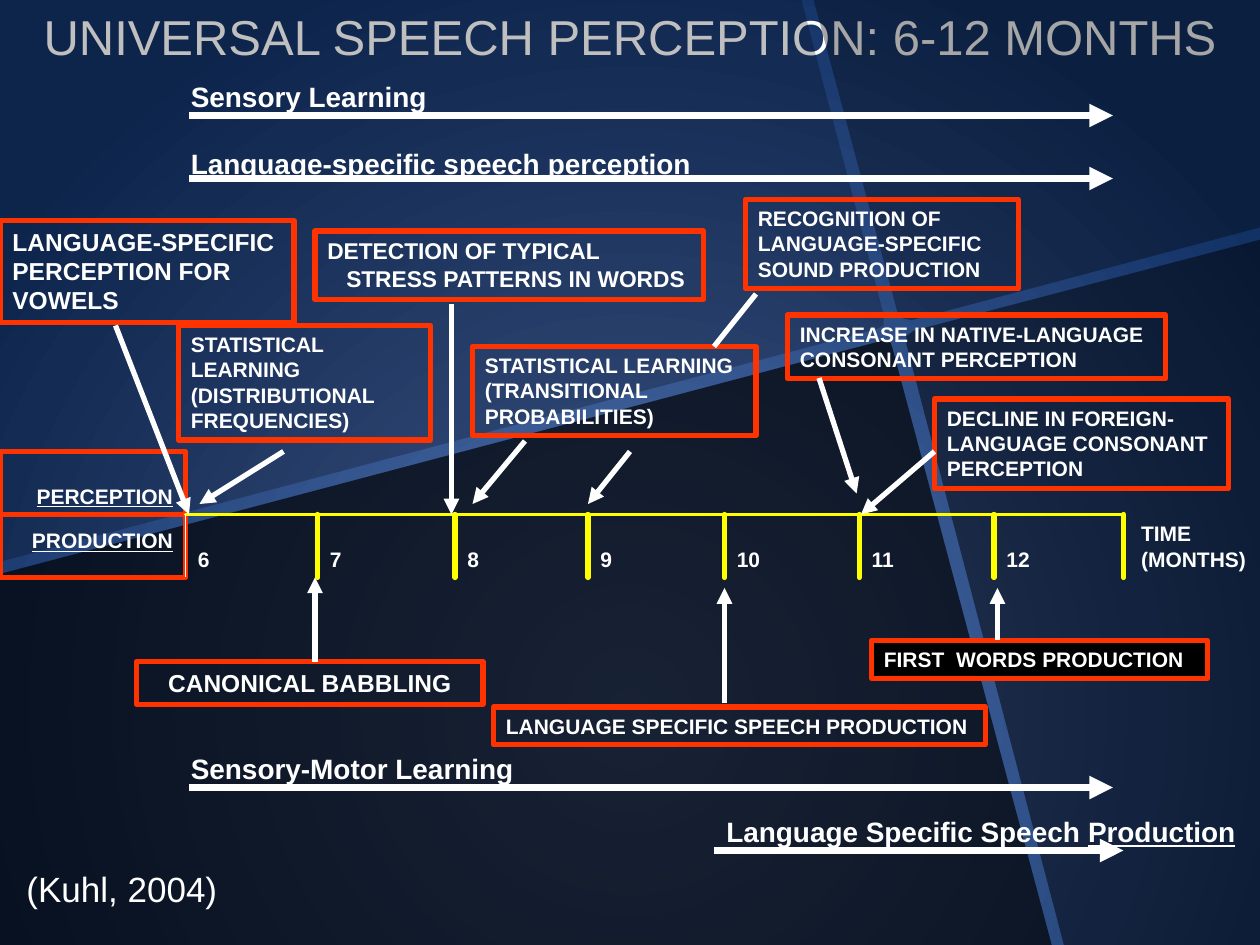
from dataclasses import dataclass

import pptx
import pptx.dml.color
import pptx.enum.shapes
import pptx.enum.text
import pptx.oxml
import pptx.oxml.ns
import pptx.util
from lxml import etree

Pt = pptx.util.Pt
Align = pptx.enum.text.PP_ALIGN
Anchor = pptx.enum.text.MSO_ANCHOR
qn = pptx.oxml.ns.qn


@dataclass(frozen=True)
class Theme:
    font: str = "Arial"
    white: str = "FFFFFF"
    black: str = "000000"
    red: str = "FF3300"
    yellow: str = "FFFF00"
    glow: str = "5273B1"
    navy: str = "123165"
    title: int = 28
    cite: int = 20
    head: int = 16
    large: int = 14
    mid: int = 13
    small: int = 12


@dataclass(frozen=True)
class Panel:
    points: tuple
    shade: int


@dataclass(frozen=True)
class Box:
    text: str
    left: float
    top: float
    width: float
    height: float
    size: int = 12
    align: Align = Align.LEFT
    fill: str = ""
    hang: float = 0


@dataclass(frozen=True)
class Line:
    x1: float
    y1: float
    x2: float
    y2: float
    color: str = "FFFFFF"
    weight: float = 3
    arrow: bool = True
    cap: str = "flat"


@dataclass(frozen=True)
class Label:
    text: str
    left: float
    top: float
    width: float
    tail: str = ""


theme = Theme()

PANELS = (
    Panel(((0, 0), (458, 0), (505.4, 180), (505, 185.5), (501, 188), (0, 321)), 25),
    Panel(((465, 0), (720, 0), (720, 130.3), (520.6, 182.9), (516, 182.5), (512.6, 178.6)), 35),
    Panel(((720, 136.8), (720, 540), (608.4, 540), (517.7, 197.3), (518, 192), (522, 189.4)), 50),
    Panel(((505.4, 194.4), (509, 196), (510.5, 199.4), (601.2, 540), (0, 540), (0, 328.3), (502.6, 195.1)), 70),
)
LABELS = (
    Label("Sensory Learning", 102, 42, 180),
    Label("Language-specific speech ", 102, 80, 304, "perception"),
    Label("Sensory-Motor Learning", 102, 426, 252),
    Label("Language Specific Speech ", 408, 462, 312, "Production"),
)
BOXES = (
    Box("CANONICAL BABBLING", 78, 378, 198, 24.5, theme.large, Align.CENTER),
    Box("STATISTICAL LEARNING (DISTRIBUTIONAL FREQUENCIES)", 102, 186, 144, 65.5),
    Box("LANGUAGE-SPECIFIC PERCEPTION FOR VOWELS", 0, 126, 168, 58.5, theme.large),
    Box("LANGUAGE SPECIFIC SPEECH PRODUCTION", 282, 404, 281, 21.6),
    Box("FIRST  WORDS PRODUCTION", 498, 366, 192, 21.6, fill=theme.black),
    Box("DETECTION OF TYPICAL\vSTRESS PATTERNS IN WORDS", 180, 132, 222, 39, theme.mid, hang=10.8),
    Box("DECLINE IN FOREIGN-LANGUAGE CONSONANT PERCEPTION", 534, 228, 168, 51),
    Box("INCREASE IN NATIVE-LANGUAGE CONSONANT PERCEPTION", 450, 180, 216, 36.5),
    Box("STATISTICAL LEARNING (TRANSITIONAL PROBABILITIES)", 270, 198, 162, 51),
    Box("RECOGNITION OF LANGUAGE-SPECIFIC SOUND PRODUCTION", 426, 114, 156, 51),
)
SPANS = ((108, 636, 66), (108, 636, 102), (108, 636, 450), (408, 642, 486))
LINKS = (
    Line(180, 378, 180, 330),
    Line(162, 258, 114, 288),
    Line(66, 186, 108, 294),
    Line(414, 402, 414, 336),
    Line(570, 366, 570, 336),
    Line(258, 174, 258, 294),
    Line(534, 258, 492, 294),
    Line(468, 216, 489.5, 282),
    Line(300, 252, 270, 288),
    Line(360, 258, 336, 288),
    Line(408, 198, 432, 168, arrow=False),
)
TICKS = (106, 181.5, 260, 336, 414, 491, 568, 642)
AXIS, FOOT, HALF = 294, 330, 36


def rgb(code: str) -> pptx.dml.color.RGBColor:
    return pptx.dml.color.RGBColor.from_string(code)


def write(shape, text: str, *, size: int, bold: bool = True, under: bool = False,
          tail: str = "", align: Align = Align.LEFT, anchor: Anchor = Anchor.TOP,
          base: float = 3.6, hang: float = 0, wrap: bool = True) -> None:
    frame = shape.text_frame
    frame.word_wrap = wrap
    frame.auto_size = pptx.enum.text.MSO_AUTO_SIZE.NONE
    frame.vertical_anchor = anchor
    frame.margin_left = frame.margin_right = Pt(7.2)
    frame.margin_top, frame.margin_bottom = Pt(3.6), Pt(base)
    para = frame.paragraphs[0]
    para.text = text
    para.alignment = align
    if hang:
        props = para._p.get_or_add_pPr()
        props.set("marL", str(Pt(hang)))
        props.set("indent", str(-Pt(hang)))
    if tail:
        para.add_run().text = tail
    for run in para.runs:
        font = run.font
        font.name, font.size, font.bold = theme.font, Pt(size), bold
        font.underline = under or bool(tail and run.text == tail)
        font.color.rgb = rgb(theme.white)


def field(slide, left: float, top: float, width: float, height: float):
    return slide.shapes.add_textbox(Pt(left), Pt(top), Pt(width), Pt(height))


def frame(slide, left: float, top: float, width: float, height: float, fill: str = ""):
    kind = pptx.enum.shapes.MSO_SHAPE.RECTANGLE
    shape = slide.shapes.add_shape(kind, Pt(left), Pt(top), Pt(width), Pt(height))
    shape.shadow.inherit = False
    if fill:
        shape.fill.solid()
        shape.fill.fore_color.rgb = rgb(fill)
    else:
        shape.fill.background()
    shape.line.color.rgb = rgb(theme.red)
    shape.line.width = Pt(3)
    return shape


def draw_box(slide, box: Box) -> None:
    shape = frame(slide, box.left, box.top, box.width, box.height, box.fill)
    write(shape, box.text, size=box.size, align=box.align, hang=box.hang)


def draw_line(slide, line: Line) -> None:
    kind = pptx.enum.shapes.MSO_CONNECTOR.STRAIGHT
    link = slide.shapes.add_connector(kind, Pt(line.x1), Pt(line.y1), Pt(line.x2), Pt(line.y2))
    link.line.color.rgb = rgb(line.color)
    link.line.width = Pt(line.weight)
    props = link._element.spPr
    stroke = props.find(qn("a:ln"))
    stroke.set("cap", line.cap)
    if line.arrow:
        etree.SubElement(stroke, qn("a:tailEnd")).set("type", "triangle")
    etree.SubElement(props, qn("a:effectLst"))


def draw_panel(slide, panel: Panel) -> None:
    first, *rest = panel.points
    pen = slide.shapes.build_freeform(*first, scale=Pt(1))
    pen.add_line_segments(rest, close=True)
    shape = pen.convert_to_shape()
    shape.shadow.inherit = False
    shape.line.fill.background()
    shape.fill.solid()
    shape.fill.fore_color.rgb = rgb(theme.black)
    tint = next(shape._element.spPr.iter(qn("a:srgbClr")))
    etree.SubElement(tint, qn("a:alpha")).set("val", str(panel.shade * 1000))


def paint(slide) -> None:
    fill = slide.background.fill
    fill.gradient()
    for stop, code in zip(fill.gradient_stops, (theme.glow, theme.navy)):
        stop.color.rgb = rgb(code)
    grad = next(slide.element.iter(qn("a:gradFill")))
    grad.remove(grad.find(qn("a:lin")))
    shade = etree.SubElement(grad, qn("a:path"))
    shade.set("path", "circle")
    rect = etree.SubElement(shade, qn("a:fillToRect"))
    for side in "ltr":
        rect.set(side, "50000")


def draw_axis(slide) -> None:
    for text, top, base in (("PRODUCTION", AXIS, 14), ("PERCEPTION", AXIS - HALF, 3.6)):
        write(frame(slide, 0, top, TICKS[0], HALF), text, size=theme.small, under=True,
              align=Align.RIGHT, anchor=Anchor.BOTTOM, base=base)
    for month, left in enumerate(TICKS[:-1], 6):
        write(field(slide, left, AXIS, 75, HALF), str(month), size=theme.small, anchor=Anchor.BOTTOM)
    write(field(slide, 645, AXIS, 75, HALF), "TIME (MONTHS)", size=theme.small, anchor=Anchor.BOTTOM)
    draw_line(slide, Line(TICKS[0], AXIS, TICKS[-1], AXIS, theme.yellow, 2, False, "rnd"))
    draw_line(slide, Line(TICKS[0], AXIS, TICKS[0], FOOT, theme.white, 1, False))
    for left in TICKS[1:]:
        draw_line(slide, Line(left, AXIS, left, FOOT, theme.yellow, 3, False, "rnd"))


def main() -> None:
    deck = pptx.Presentation()
    deck.slide_width, deck.slide_height = Pt(720), Pt(540)
    slide = deck.slides.add_slide(deck.slide_layouts.get_by_name("Title Only"))
    paint(slide)
    for panel in PANELS:
        draw_panel(slide, panel)
    title = slide.shapes.title
    title.left, title.top, title.width, title.height = Pt(0), Pt(0), Pt(720), Pt(41)
    write(title, "UNIVERSAL SPEECH PERCEPTION: 6-12 MONTHS", size=theme.title,
          bold=False, align=Align.CENTER)
    draw_axis(slide)
    for label in LABELS:
        write(field(slide, label.left, label.top, label.width, 26.6), label.text,
              size=theme.head, tail=label.tail)
    for box in BOXES:
        draw_box(slide, box)
    for start, end, level in SPANS:
        draw_line(slide, Line(start, level, end, level, weight=4.5))
    for link in LINKS:
        draw_line(slide, link)
    write(field(slide, 8, 492, 132, 31.5), "(Kuhl, 2004)", size=theme.cite, bold=False)
    deck.save("out.pptx")


if __name__ == "__main__":
    main()
